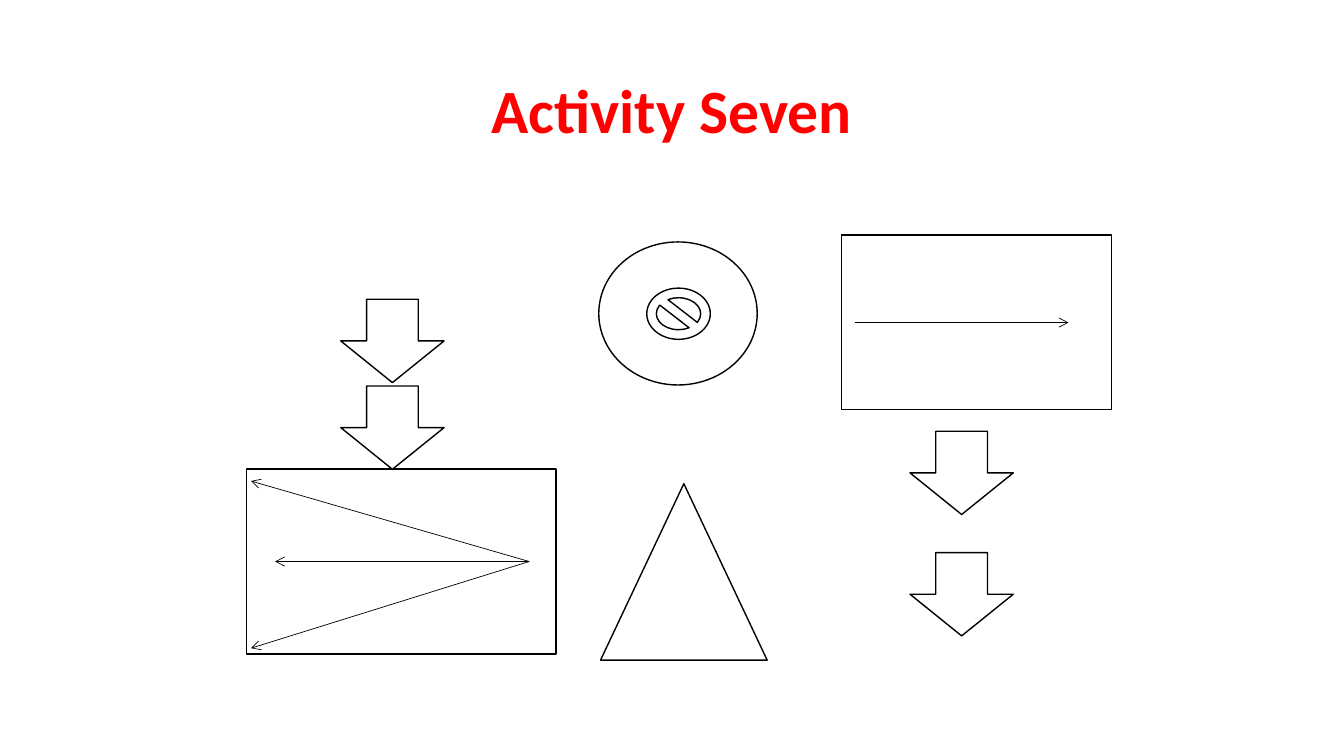
from dataclasses import dataclass

from lxml import etree
from pptx import Presentation
from pptx.dml.color import RGBColor
from pptx.enum.shapes import MSO_CONNECTOR, MSO_SHAPE
from pptx.enum.text import MSO_ANCHOR, PP_ALIGN
from pptx.oxml.ns import qn
from pptx.util import Pt

STRAIGHT = MSO_CONNECTOR.STRAIGHT
RECTANGLE = MSO_SHAPE.RECTANGLE
OVAL = MSO_SHAPE.OVAL
TRIANGLE = MSO_SHAPE.ISOSCELES_TRIANGLE
DOWN_ARROW = MSO_SHAPE.DOWN_ARROW
NO_SYMBOL = MSO_SHAPE.NO_SYMBOL
MIDDLE = MSO_ANCHOR.MIDDLE
CENTER = PP_ALIGN.CENTER


@dataclass(frozen=True)
class Theme:
    """Colours, type and line weights of the slide."""
    ink: RGBColor = RGBColor(0, 0, 0)
    paper: RGBColor = RGBColor(255, 255, 255)
    accent: RGBColor = RGBColor(255, 0, 0)
    font: str = "Calibri"
    title_size: float = 44
    outline: float = 1
    ray: float = 0.5


def apply_format(target, values):
    """Set each named attribute on the target."""
    for name, value in values.items():
        setattr(target, name, value)


class SlideBuilder:
    """Draws styled elements on one slide, measured in points."""

    def __init__(self, slide, theme):
        self.shapes = slide.shapes
        self.theme = theme

    def title(self, wording, left, top, width, height):
        """Add the centred heading."""
        heading = self.shapes.add_textbox(Pt(left), Pt(top), Pt(width), Pt(height))
        frame = heading.text_frame
        apply_format(frame, {"word_wrap": True, "vertical_anchor": MIDDLE})
        paragraph = frame.paragraphs[0]
        apply_format(paragraph, {"text": wording, "alignment": CENTER, "line_spacing": 0.9})
        font = paragraph.runs[0].font
        apply_format(font, {"name": self.theme.font, "size": Pt(self.theme.title_size), "bold": True})
        font.color.rgb = self.theme.accent

    def figure(self, preset, left, top, width, height):
        """Add an outlined preset shape."""
        figure = self.shapes.add_shape(preset, Pt(left), Pt(top), Pt(width), Pt(height))
        figure.shadow.inherit = False
        figure.fill.solid()
        figure.fill.fore_color.rgb = self.theme.paper
        figure.line.color.rgb = self.theme.ink
        figure.line.width = Pt(self.theme.outline)

    def ray(self, start, end):
        """Add a thin line with an open arrowhead at its end."""
        ray = self.shapes.add_connector(STRAIGHT, *map(Pt, start + end))
        ray.line.color.rgb = self.theme.ink
        ray.line.width = Pt(self.theme.ray)
        etree.SubElement(ray.line._get_or_add_ln(), qn("a:tailEnd"), type="arrow")
        etree.SubElement(ray._element.spPr, qn("a:effectLst"))


def main():
    """Build and save the slide."""
    deck = Presentation()
    apply_format(deck, {"slide_width": Pt(960), "slide_height": Pt(540)})
    builder = SlideBuilder(deck.slides.add_slide(deck.slide_layouts[6]), Theme())

    builder.title("Activity Seven", 66, 28.8, 828, 104.4)
    builder.figure(OVAL, 427.7, 172.8, 113.2, 102.2)
    builder.figure(RECTANGLE, 176.3, 335, 221, 132.3)
    builder.figure(RECTANGLE, 601, 167.8, 192.8, 124.6)
    for left, top in ((243.4, 275.7), (243.4, 213.8), (650, 394.7), (650, 308)):
        builder.figure(DOWN_ARROW, left, top, 73.8, 59.5)
    builder.figure(TRIANGLE, 429, 345.5, 119, 126)

    builder.ray((610.6, 230.4), (763.2, 230.4))
    fan_origin = (378, 401.1)
    for tip in ((196.6, 401.1), (179.3, 463), (179.3, 343.6)):
        builder.ray(fan_origin, tip)
    builder.figure(NO_SYMBOL, 462, 205.8, 45.4, 36.6)

    deck.save("out.pptx")


if __name__ == "__main__":
    main()
